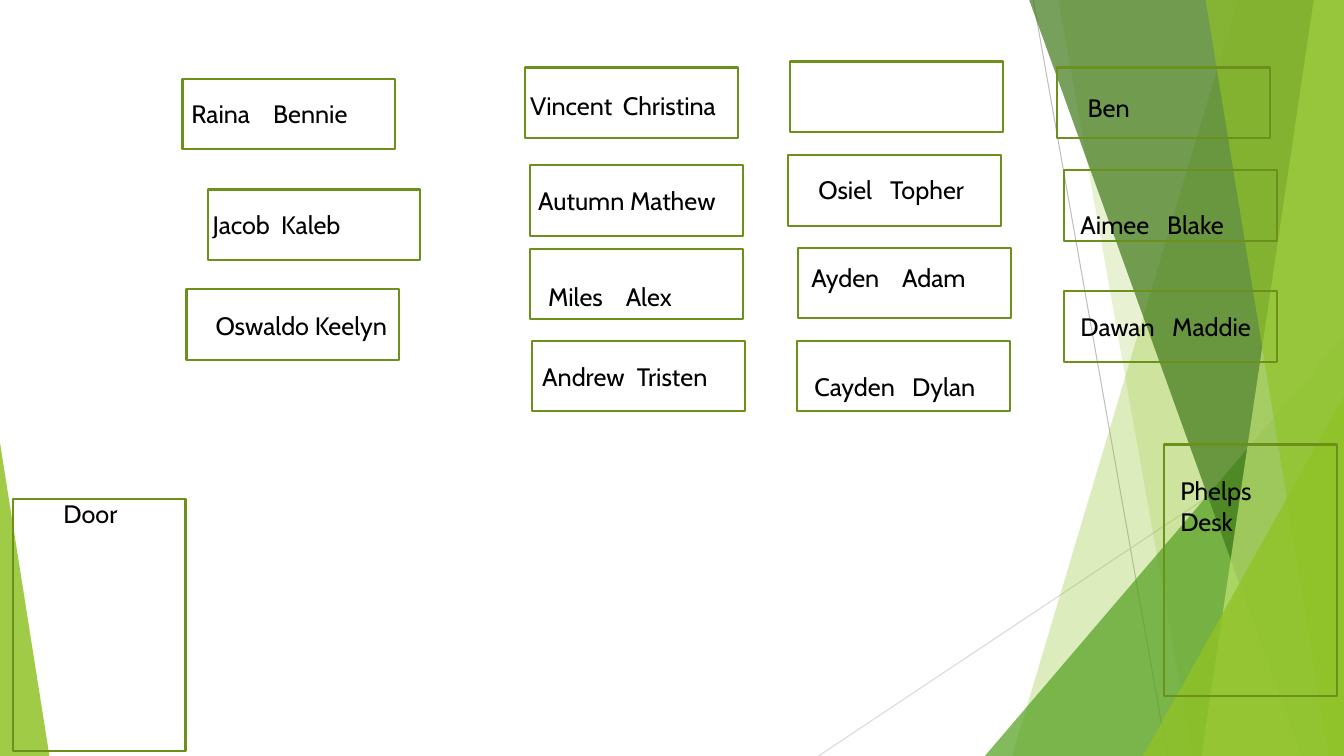
from lxml.etree import SubElement
from pptx import Presentation
from pptx.dml.color import RGBColor
from pptx.enum.shapes import MSO_AUTO_SHAPE_TYPE as Shape, MSO_CONNECTOR as Connector
from pptx.enum.text import MSO_AUTO_SIZE as AutoSize
from pptx.oxml.ns import qn
from pptx.util import Inches, Pt

WIDTH, HEIGHT = Inches(13.33), Inches(7.5)
COLORS = {"lime": "90C226", "green": "54A021", "forest": "3F7819", "pale": "C0E474",
          "outline": "6B901C", "gray": "BFBFBF", "silver": "D9D9D9", "text": "000000"}
DESK_SIZE = (15.83, 9.33)
LABEL_SIZE = (16.5, 5.33)
LARGE_SIZE = (12.83, 33.33)
LINES = [((76.88, 0), (86.85, 100), "gray"), ((100, 53.73), (60.9, 100), "silver")]
FACETS = [
    ("band", (92.1, 75.3), "lime", 30),
    ("band", (78.75, 88.73), "lime", 20),
    ("triangle", (73.28, 44.4, 26.72, 55.6, 1), "green", 72),
    ("band", (76.58, 96.83), "forest", 70),
    ("band", (97.75, 89.4), "pale", 70),
    ("band", (89.7, 98.88), "lime", 65),
    ("triangle", (85.05, 52.4, 14.95, 47.6, 1), "lime", 80),
    ("triangle", (0, 58.53, 3.68, 41.47, 0), "lime", 85),
]
EMPTY_DESK = (58.8, 8.13)
DESKS = [
    ((13.58, 10.4), (13.5, 12.4), "Raina\tBennie", 6.08),
    ((15.45, 25.07), (15.08, 27.07), "Jacob\tKaleb", 5.1),
    ((13.88, 38.27), (15.3, 40.4), "Oswaldo Keelyn", None),
    ((39.08, 8.93), (38.7, 11.33), "Vincent\tChristina", 6.9),
    ((39.45, 21.87), (39.3, 23.87), "Autumn Mathew", None),
    ((39.45, 32.93), (40.05, 36.53), "Miles\tAlex", 5.78),
    ((39.6, 45.07), (39.6, 47.07), "Andrew\tTristen", 7.05),
    ((58.65, 20.53), (60.15, 22.4), "Osiel\tTopher", 5.33),
    ((59.4, 32.8), (59.63, 34), "Ayden\tAdam", 6.75),
    ((59.33, 45.07), (59.85, 48.4), "Cayden\tDylan", 7.28),
    ((78.68, 8.93), (80.18, 11.6), "Ben", None),
    ((79.2, 22.53), (79.65, 27.07), "Aimee\tBlake", 6.45),
    ((79.2, 38.53), (79.65, 40.53), "Dawan\tMaddie", 6.83),
]
LANDMARKS = [
    ((86.63, 58.8), (87.08, 62.27), "Phelps\nDesk", 9.47),
    ((0.98, 66), (3.98, 65.2), "Door", 5.33),
]


def across(share):
    """Turn a percentage of the slide width into a length."""
    return round(WIDTH * share / 100)


def down(share):
    """Turn a percentage of the slide height into a length."""
    return round(HEIGHT * share / 100)


def place(spot, size):
    """Turn a spot and a size in percentages into four lengths."""
    return across(spot[0]), down(spot[1]), across(size[0]), down(size[1])


def paint(shape, color, alpha):
    """Give a facet a translucent fill without outline or shadow."""
    shape.shadow.inherit = False
    shape.line.fill.background()
    shape.fill.solid()
    shape.fill.fore_color.rgb = RGBColor.from_string(COLORS[color])
    tint = shape.fill._xPr.find(qn("a:solidFill"))[0]
    SubElement(tint, qn("a:alpha"), val=str(alpha * 1000))


def add_line(page, start, end, color):
    """Draw a thin background line."""
    line = page.shapes.add_connector(Connector.STRAIGHT, across(start[0]), down(start[1]),
                                     across(end[0]), down(end[1]))
    line.line.color.rgb = RGBColor.from_string(COLORS[color])
    line.line.width = Pt(0.75)
    SubElement(line._element.spPr, qn("a:effectLst"))


def add_band(page, top, bottom):
    """Draw a slanted band that reaches the right edge of the slide."""
    builder = page.shapes.build_freeform(across(top), 0)
    builder.add_line_segments([(WIDTH, 0), (WIDTH, HEIGHT), (across(bottom), HEIGHT)])
    return builder.convert_to_shape()


def add_triangle(page, left, top, width, height, apex):
    """Draw a triangle with its apex at a share of its width."""
    triangle = page.shapes.add_shape(Shape.ISOSCELES_TRIANGLE,
                                     *place((left, top), (width, height)))
    triangle.adjustments[0] = apex
    return triangle


def add_frame(page, spot, size):
    """Draw an unfilled desk or door outline."""
    frame = page.shapes.add_shape(Shape.RECTANGLE, *place(spot, size))
    frame.shadow.inherit = False
    frame.fill.background()
    frame.line.color.rgb = RGBColor.from_string(COLORS["outline"])
    frame.line.width = Pt(1.5)


def add_label(page, spot, text, *, size=LABEL_SIZE, tab=None, font="Cabin", points=18,
              color="text"):
    """Write text in a box, with an optional tab stop for the second name."""
    box = page.shapes.add_textbox(*place(spot, size))
    frame = box.text_frame
    frame.word_wrap = True
    frame.auto_size = AutoSize.SHAPE_TO_FIT_TEXT
    frame.text = text
    for para in frame.paragraphs:
        if tab:
            stops = SubElement(para._p.get_or_add_pPr(), qn("a:tabLst"))
            SubElement(stops, qn("a:tab"), pos=str(across(tab)), algn="l")
        for span in para.runs:
            span.font.name = font
            span.font.size = Pt(points)
            span.font.color.rgb = RGBColor.from_string(COLORS[color])


def main():
    """Build the seating chart."""
    deck = Presentation()
    deck.slide_width, deck.slide_height = WIDTH, HEIGHT
    page = deck.slides.add_slide(deck.slide_layouts.get_by_name("Blank"))
    for start, end, color in LINES:
        add_line(page, start, end, color)
    makers = {"band": add_band, "triangle": add_triangle}
    for kind, shares, color, alpha in FACETS:
        paint(makers[kind](page, *shares), color, alpha)
    add_frame(page, EMPTY_DESK, DESK_SIZE)
    for desk, label, names, tab in DESKS:
        add_frame(page, desk, DESK_SIZE)
        add_label(page, label, names, tab=tab)
    for spot, label, text, height in LANDMARKS:
        add_frame(page, spot, LARGE_SIZE)
        add_label(page, label, text, size=(7.95, height))
    deck.save("out.pptx")


if __name__ == "__main__":
    main()
